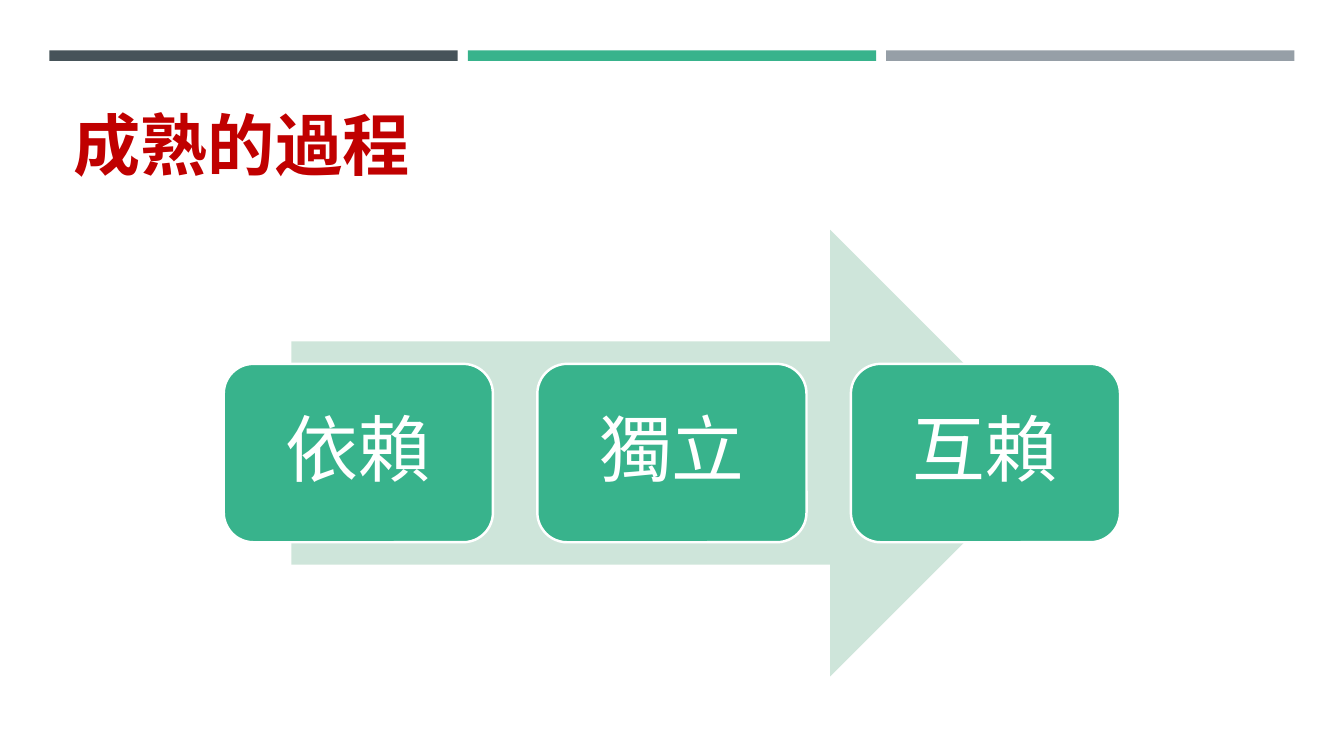
from pptx import Presentation
from pptx.dml.color import RGBColor
from pptx.enum.shapes import MSO_SHAPE as Preset
from pptx.enum.text import MSO_ANCHOR as Anchor, PP_ALIGN as Align
from pptx.util import Inches, Pt

COLORS = {
    "slate": "465359", "green": "38B38C", "gray": "969FA7",
    "mint": "CEE5DA", "red": "C00000", "white": "FFFFFF",
}


class ProcessPage:
    """Draws styled elements on one page, placed by percent of its size."""

    def __init__(self, deck):
        self.deck = deck
        self.page = deck.slides.add_slide(deck.slide_layouts[6])

    def color(self, name):
        return RGBColor.from_string(COLORS[name])

    def place(self, left, top, width, height):
        across, down = self.deck.slide_width / 100, self.deck.slide_height / 100
        return [round(n) for n in (left * across, top * down, width * across, height * down)]

    def shape(self, preset, area, fill, line=None):
        box = self.page.shapes.add_shape(preset, *self.place(*area))
        box.shadow.inherit = False
        box.fill.solid()
        box.fill.fore_color.rgb = self.color(fill)
        if line:
            box.line.color.rgb = self.color(line)
            box.line.width = Pt(1.75)
        else:
            box.line.fill.background()
        return box

    def label(self, box, text, color, align, frame_format, font_format):
        frame = box.text_frame
        for name, value in {"word_wrap": True, **frame_format}.items():
            setattr(frame, name, value)
        para = frame.paragraphs[0]
        para.alignment = align
        para.line_spacing = 0.9
        span = para.add_run()
        span.text = text
        for name, value in font_format.items():
            setattr(span.font, name, value)
        span.font.color.rgb = self.color(color)

    def title(self, text, area):
        box = self.page.shapes.add_textbox(*self.place(*area))
        self.label(box, text, "red", Align.LEFT, {"vertical_anchor": Anchor.BOTTOM},
                   {"name": "Roboto Condensed", "size": Pt(48), "bold": True})

    def stage(self, text, area):
        box = self.shape(Preset.ROUNDED_RECTANGLE, area, "green", "white")
        self.label(box, text, "white", Align.CENTER, {"vertical_anchor": Anchor.MIDDLE},
                   {"name": "Arial", "size": Pt(52)})


def main():
    deck = Presentation()
    deck.slide_width, deck.slide_height = Inches(13.33), Inches(7.5)
    process = ProcessPage(deck)
    for column, fill in enumerate(("slate", "green", "gray")):
        process.shape(Preset.RECTANGLE, (3.68 + 31.13 * column, 6.67, 30.38, 1.4), fill)
    process.title("成熟的過程", (4.73, 10.67, 90.47, 14.4))
    process.shape(Preset.RIGHT_ARROW, (21.68, 30.4, 56.71, 59.07), "mint")
    for column, text in enumerate(("依賴", "獨立", "互賴")):
        process.stage(text, (16.65 + 23.33 * column, 48.13, 20.03, 23.6))
    deck.save("out.pptx")


if __name__ == "__main__":
    main()
